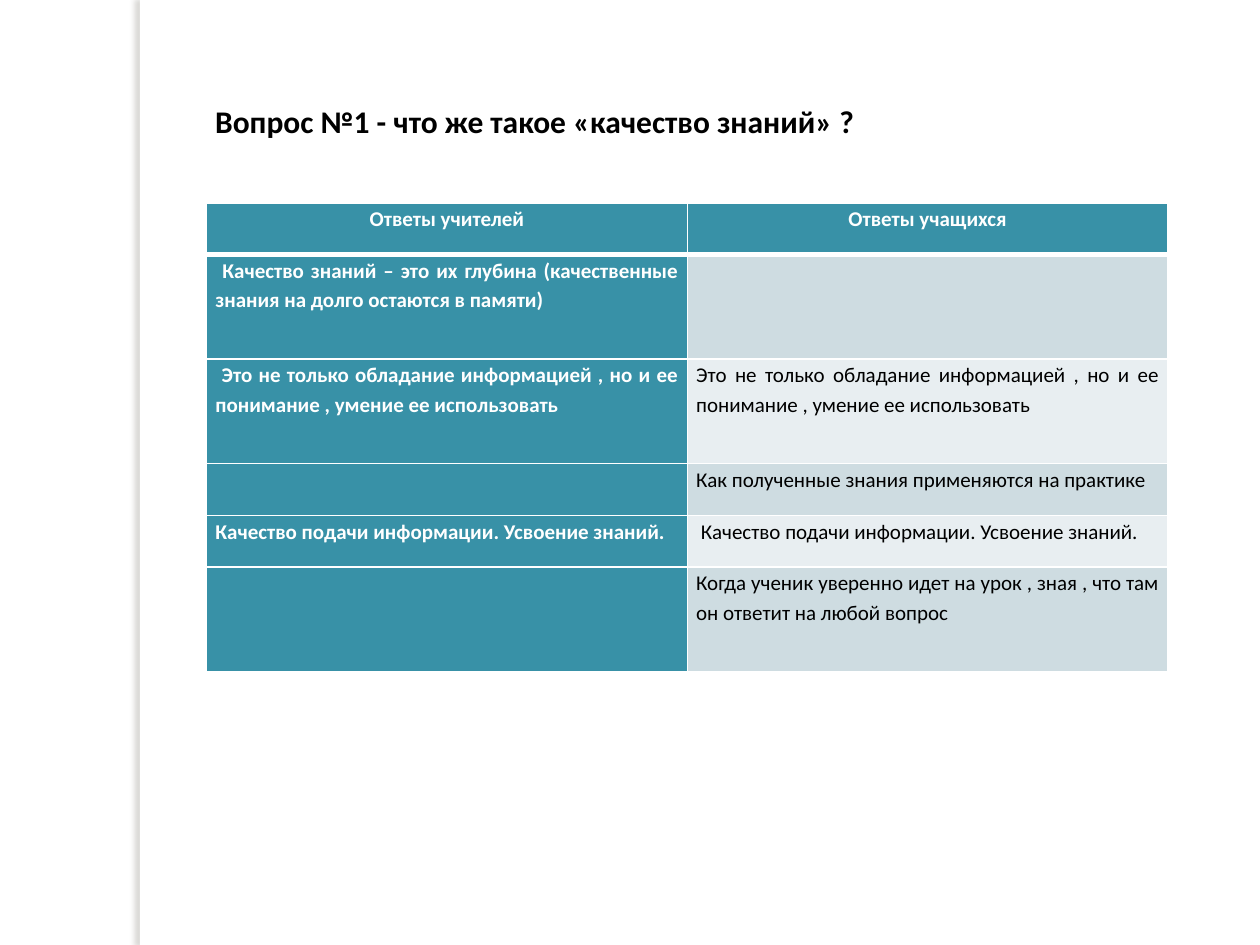
from dataclasses import dataclass

from lxml.etree import SubElement as Sub
from pptx import Presentation
from pptx.dml.color import RGBColor as Rgb
from pptx.enum.shapes import MSO_SHAPE as Shape
from pptx.enum.text import PP_ALIGN as Align
from pptx.oxml.ns import qn
from pptx.util import Inches, Pt


@dataclass(frozen=True)
class Theme:
    font: str = "Calibri"
    white: str = "FFFFFF"
    black: str = "000000"
    teal: str = "3891A7"
    bands: tuple = ("CEDCE1", "E8EEF1")
    shade: str = "736F63"
    title: float = 18
    body: float = 12
    line: float = 16.8


THEME = Theme()
TITLE = "Вопрос №1 - что же такое «качество знаний» ?"
ROWS = [
    ("Ответы учителей", "Ответы учащихся"),
    (" Качество знаний – это их глубина (качественные знания на долго остаются в памяти)", ""),
    (" Это не только обладание информацией , но и ее понимание , умение ее использовать",
     "Это не только обладание информацией , но и ее понимание , умение ее использовать"),
    ("", "Как полученные знания применяются на практике"),
    ("Качество подачи информации. Усвоение знаний.",
     " Качество подачи информации. Усвоение знаний."),
    ("", "Когда ученик уверенно идет на урок , зная , что там он ответит на любой вопрос"),
]
LOW, TALL = 0.41, 0.83
HEIGHTS = [LOW, TALL, TALL, LOW, LOW, TALL]


def style(font, size, color, bold):
    font.name = THEME.font
    font.size = Pt(size)
    font.bold = bold
    font.color.rgb = Rgb.from_string(color)


def add_strip(slide):
    strip = slide.shapes.add_shape(
        Shape.RECTANGLE, Inches(1.11), 0, Inches(0.08), Inches(7.5))
    strip.fill.solid()
    strip.fill.fore_color.rgb = Rgb.from_string(THEME.white)
    strip.line.fill.background()
    strip.shadow.inherit = False
    effects = strip.element.spPr.find(qn("a:effectLst"))
    shadow = Sub(effects, qn("a:outerShdw"), blurRad=str(Pt(3)), dist=str(Pt(3)),
                 dir="10800000", algn="tl", rotWithShape="0")
    color = Sub(shadow, qn("a:srgbClr"), val=THEME.shade)
    Sub(color, qn("a:alpha"), val="25000")


def add_title(slide):
    box = slide.shapes.add_textbox(Inches(1.61), Inches(0.76), Inches(7.56), Inches(0.71))
    frame = box.text_frame
    frame.word_wrap = True
    frame.text = TITLE
    style(frame.paragraphs[0].runs[0].font, THEME.title, THEME.black, True)


def set_edges(cell, head, below):
    props = cell._tc.get_or_add_tcPr()
    widths = {"L": 1, "R": 1, "T": 3 if below else 1, "B": 3 if head else 1}
    for at, (side, width) in enumerate(widths.items()):
        edge = props.makeelement(qn(f"a:ln{side}"), {"w": str(Pt(width))})
        fill = Sub(edge, qn("a:solidFill"))
        Sub(fill, qn("a:srgbClr"), val=THEME.white)
        props.insert(at, edge)


def fill_cell(cell, text, row, col):
    head = row == 0
    dark = head or col == 0
    cell.margin_left = cell.margin_right = Inches(0.07)
    cell.margin_top = cell.margin_bottom = 0
    cell.fill.solid()
    cell.fill.fore_color.rgb = Rgb.from_string(
        THEME.teal if dark else THEME.bands[(row - 1) % 2])
    cell.text_frame.text = text
    para = cell.text_frame.paragraphs[0]
    para.alignment = Align.CENTER if head else Align.JUSTIFY
    para.line_spacing = Pt(THEME.line)
    for run in para.runs:
        style(run.font, THEME.body, THEME.white if dark else THEME.black, dark)
    set_edges(cell, head, row == 1)


def add_grid(slide):
    table = slide.shapes.add_table(
        len(ROWS), 2, Inches(1.64), Inches(1.61), Inches(7.63), Inches(sum(HEIGHTS))).table
    for row, (texts, height) in enumerate(zip(ROWS, HEIGHTS)):
        table.rows[row].height = Inches(height)
        for col, text in enumerate(texts):
            fill_cell(table.cell(row, col), text, row, col)


def main():
    deck = Presentation()
    deck.slide_width, deck.slide_height = Inches(10), Inches(7.5)
    slide = deck.slides.add_slide(deck.slide_layouts[6])
    add_strip(slide)
    add_title(slide)
    add_grid(slide)
    deck.save("out.pptx")


if __name__ == "__main__":
    main()
